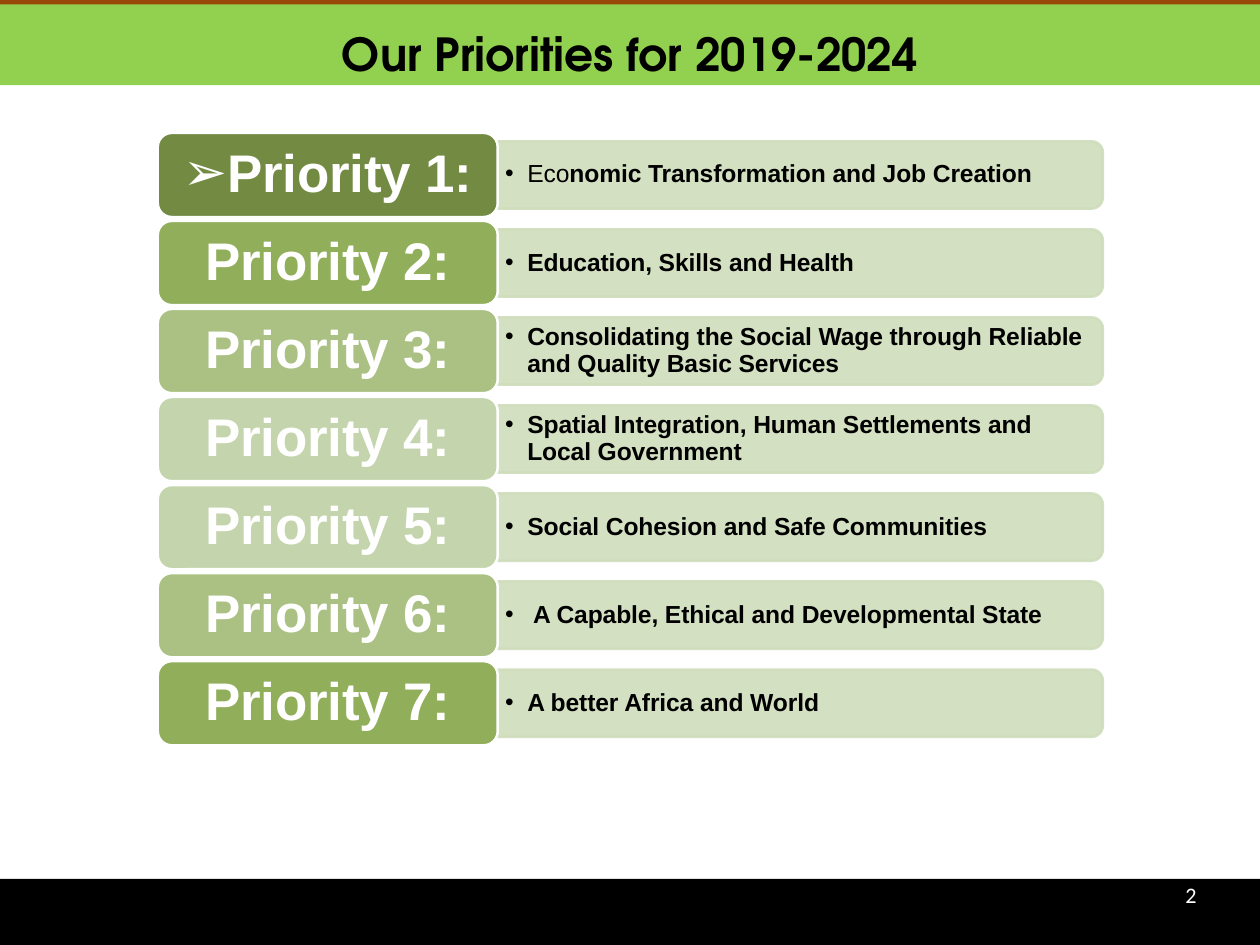
from dataclasses import dataclass

from lxml.etree import SubElement
from pptx import Presentation
from pptx.dml.color import RGBColor
from pptx.enum.shapes import MSO_SHAPE as Preset
from pptx.enum.text import MSO_ANCHOR as Anchor, MSO_AUTO_SIZE as AutoSize, PP_ALIGN as Align
from pptx.oxml.ns import qn
from pptx.util import Pt

BLACK = RGBColor(0x00, 0x00, 0x00)
WHITE = RGBColor(0xFF, 0xFF, 0xFF)
BROWN = RGBColor(0x98, 0x48, 0x07)
BRIGHT_GREEN = RGBColor(0x92, 0xD0, 0x50)
PANEL_GREEN = RGBColor(0xD0, 0xDD, 0xBC)
DARK_GREEN = RGBColor(0x73, 0x8A, 0x42)
MID_GREEN = RGBColor(0x91, 0xAE, 0x5A)
SOFT_GREEN = RGBColor(0xAA, 0xC1, 0x83)
PALE_GREEN = RGBColor(0xC4, 0xD4, 0xAC)

# Lengths in points
SLIDE_WIDTH, SLIDE_HEIGHT = 1024, 768
LABEL_LEFT, LABEL_TOP, LABEL_WIDTH, LABEL_HEIGHT = 128.2, 108, 276.3, 68.4
PANEL_WIDTH, PANEL_HEIGHT = 491.8, 54.7
ROW_PITCH = 71.55


@dataclass
class Priority:
    goal: str
    color: RGBColor
    label_bullet: str = ""
    plain_start: str = ""


PRIORITIES = [
    Priority("nomic Transformation and Job Creation", DARK_GREEN, "➢", "Eco"),
    Priority("Education, Skills and Health", MID_GREEN),
    Priority("Consolidating the Social Wage through Reliable and Quality Basic Services", SOFT_GREEN),
    Priority("Spatial Integration, Human Settlements and Local Government", PALE_GREEN),
    Priority("Social Cohesion and Safe Communities", PALE_GREEN),
    Priority(" A Capable, Ethical and Developmental State", SOFT_GREEN),
    Priority("A better Africa and World", MID_GREEN),
]


def add_filled(slide, preset, left: float, top: float, width: float, height: float, color: RGBColor):
    shape = slide.shapes.add_shape(preset, Pt(left), Pt(top), Pt(width), Pt(height))
    shape.shadow.inherit = False
    shape.fill.solid()
    shape.fill.fore_color.rgb = color
    shape.line.fill.background()
    return shape


def set_outline(shape, color: RGBColor) -> None:
    shape.line.color.rgb = color
    shape.line.width = Pt(2)


def set_frame(text_frame, left: float, top: float, right: float, bottom: float, anchor=Anchor.MIDDLE) -> None:
    text_frame.word_wrap = True
    text_frame.auto_size = AutoSize.NONE
    text_frame.vertical_anchor = anchor
    text_frame.margin_left, text_frame.margin_top = Pt(left), Pt(top)
    text_frame.margin_right, text_frame.margin_bottom = Pt(right), Pt(bottom)


def set_bullet(paragraph, character: str, indent: float) -> None:
    properties = paragraph._p.get_or_add_pPr()
    properties.set("marL", str(Pt(indent)))
    properties.set("indent", str(Pt(-indent)))
    SubElement(properties, qn("a:buFont")).set("typeface", "Arial")
    SubElement(properties, qn("a:buChar")).set("char", character)


def format_run(run, size: float, color: RGBColor, name: str = "Arial", bold: bool = True, spacing: int = -10) -> None:
    run.font.size, run.font.name, run.font.bold = Pt(size), name, bold
    run.font.color.rgb = color
    run._r.get_or_add_rPr().set("spc", str(spacing))


def add_goal(slide, priority: Priority, middle: float) -> None:
    # Panel: upright shape turned so that its rounded end is on the right
    panel_left = LABEL_LEFT + LABEL_WIDTH
    panel = add_filled(slide, Preset.ROUND_2_SAME_RECTANGLE,
                       panel_left + (PANEL_WIDTH - PANEL_HEIGHT) / 2, middle - PANEL_WIDTH / 2,
                       PANEL_HEIGHT, PANEL_WIDTH, PANEL_GREEN)
    panel.rotation = 90
    set_outline(panel, PANEL_GREEN)
    for color in panel._element.spPr.iter(qn("a:srgbClr")):
        SubElement(color, qn("a:alpha")).set("val", "90000")

    # Goal text
    text_height = 49
    box = slide.shapes.add_textbox(Pt(panel_left), Pt(middle - text_height / 2), Pt(489), Pt(text_height))
    set_frame(box.text_frame, 6, 3, 6, 3)
    paragraph = box.text_frame.paragraphs[0]
    paragraph.line_spacing = 0.9
    set_bullet(paragraph, "•", 18)
    for text, bold in ((priority.plain_start, False), (priority.goal, True)):
        if text:
            run = paragraph.add_run()
            run.text = text
            format_run(run, 20, BLACK, bold=bold)


def add_label(slide, number: int, priority: Priority, top: float) -> None:
    label = add_filled(slide, Preset.ROUNDED_RECTANGLE, LABEL_LEFT, top,
                       LABEL_WIDTH, LABEL_HEIGHT, priority.color)
    set_outline(label, WHITE)
    set_frame(label.text_frame, 16.3, 10, 16.3, 10)
    paragraph = label.text_frame.paragraphs[0]
    paragraph.text = f"Priority {number}:"
    paragraph.alignment = Align.CENTER
    paragraph.line_spacing = 0.9
    if priority.label_bullet:
        set_bullet(paragraph, priority.label_bullet, 0)
    format_run(paragraph.runs[0], 43, WHITE)


def add_title(slide) -> None:
    add_filled(slide, Preset.RECTANGLE, 0, 0, SLIDE_WIDTH, 69, BROWN)
    title = slide.shapes.title
    title.left, title.top, title.width, title.height = Pt(0), Pt(3.6), Pt(SLIDE_WIDTH), Pt(65.5)
    title.fill.solid()
    title.fill.fore_color.rgb = BRIGHT_GREEN
    title.text_frame.text = "Our Priorities for 2019-2024"
    set_frame(title.text_frame, 0, 13, 0, 0, Anchor.TOP)
    paragraph = title.text_frame.paragraphs[0]
    paragraph.alignment = Align.CENTER
    paragraph.line_spacing = Pt(49.1)
    format_run(paragraph.runs[0], 37, BLACK, "TeX Gyre Adventor", spacing=0)
    # Bring the title in front of the brown band
    title._element.getparent().append(title._element)


def add_footer(slide) -> None:
    add_filled(slide, Preset.RECTANGLE, 0, 714.3, SLIDE_WIDTH, SLIDE_HEIGHT - 714.3, BLACK)
    box = slide.shapes.add_textbox(Pt(952.6), Pt(716.4), Pt(22.4), Pt(21.6))
    box.text_frame.text = "2"
    set_frame(box.text_frame, 10.8, 0, 0, 0, Anchor.TOP)
    format_run(box.text_frame.paragraphs[0].runs[0], 18, WHITE, "Calibri", bold=False)


def main() -> None:
    presentation = Presentation()
    presentation.slide_width, presentation.slide_height = Pt(SLIDE_WIDTH), Pt(SLIDE_HEIGHT)
    slide = presentation.slides.add_slide(presentation.slide_layouts[5])

    add_title(slide)
    add_footer(slide)
    for index, priority in enumerate(PRIORITIES):
        top = LABEL_TOP + index * ROW_PITCH
        add_goal(slide, priority, top + LABEL_HEIGHT / 2)
        add_label(slide, index + 1, priority, top)

    presentation.save("out.pptx")


if __name__ == "__main__":
    main()
